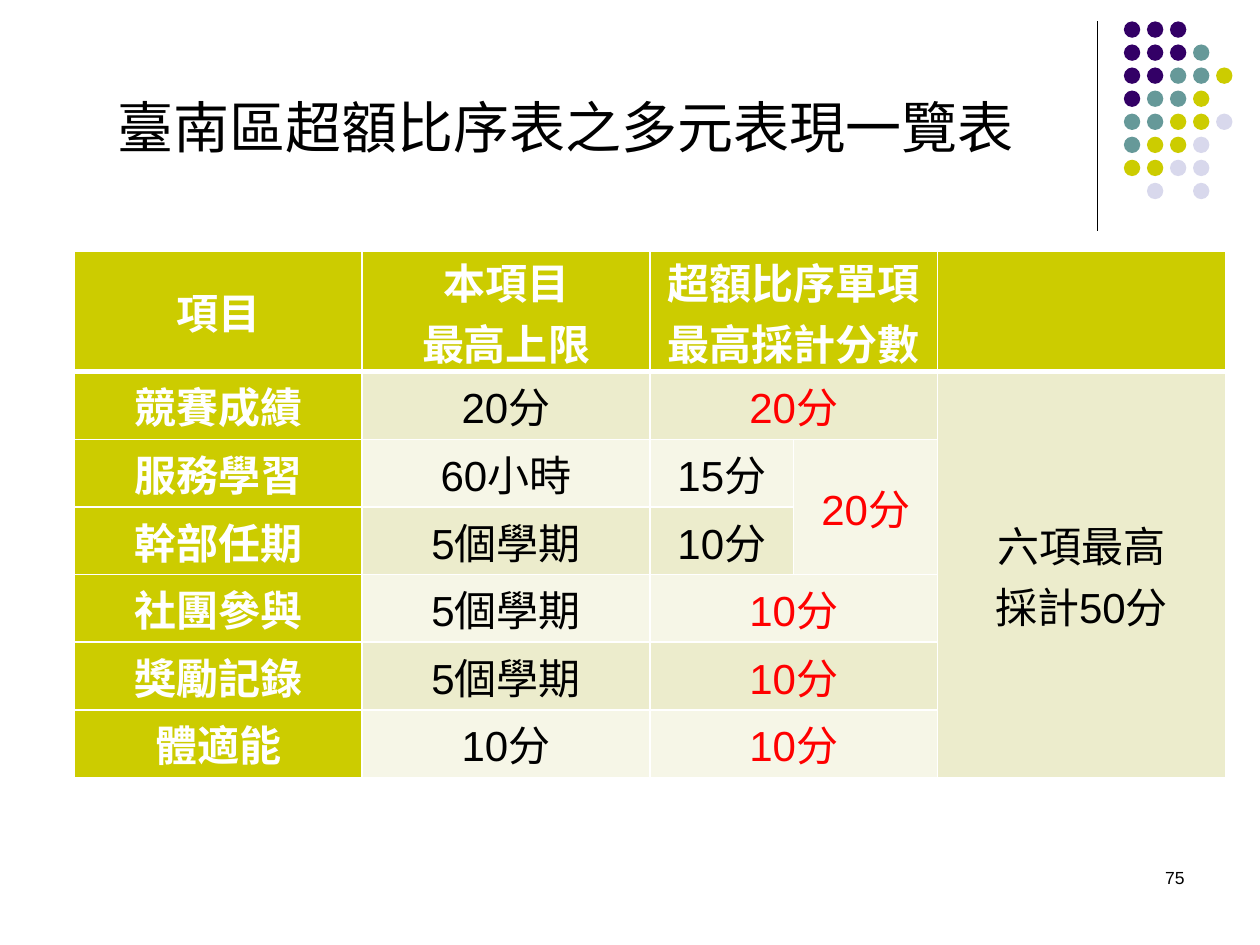
from pptx import Presentation
from pptx.dml.color import RGBColor
from pptx.enum.shapes import MSO_CONNECTOR as Line, MSO_SHAPE as Shape
from pptx.enum.text import MSO_ANCHOR as Anchor, MSO_AUTO_SIZE as Fit, PP_ALIGN as Align
from pptx.oxml import parse_xml
from pptx.oxml.ns import nsdecls
from pptx.util import Inches, Pt

WHITE, BLACK, RED = "FFFFFF", "000000", "FF0000"
GOLD, SAND, PALE = "CCCC00", "ECECCC", "F6F6E7"
DOTS = ["PPP", "PPPT", "PPTTG", "PTTG", "TTGGL", "TGGL", "GGLL", " L L"]
TINTS = {"P": "330066", "T": "669999", "G": GOLD, "L": "D8D8EC"}

HEAD = ["項目", "本項目\n最高上限", "超額比序單項\n最高採計分數", "", ""]
ROWS = [
    ["競賽成績", "20分", "20分", "", "六項最高\n採計50分"],
    ["服務學習", "60小時", "15分", "20分", ""],
    ["幹部任期", "5個學期", "10分", "", ""],
    ["社團參與", "5個學期", "10分", "", ""],
    ["獎勵記錄", "5個學期", "10分", "", ""],
    ["體適能", "10分", "10分", "", ""],
]
SPLIT = (2, 3)  # rows whose score column stays in two halves


def color(code):
    return RGBColor.from_string(code)


def write(frame, text, size=24, ink=BLACK, bold=False, align=Align.CENTER,
          font="Arial", cjk="Noto Sans CJK SC"):
    frame.text = text
    for para in frame.paragraphs:
        para.alignment = align
        for run in para.runs:
            style = run.font
            style.size, style.bold, style.name = Pt(size), bold, font
            style.color.rgb = color(ink)
            run._r.get_or_add_rPr().append(
                parse_xml(f'<a:ea {nsdecls("a")} typeface="{cjk}"/>'))


def edge(cell, heavy=()):
    """Draw white cell borders, 3 pt on the heavy sides and 1 pt elsewhere."""
    props = cell._tc.get_or_add_tcPr()
    for spot, side in enumerate("LRTB"):
        wide = Pt(3 if side in heavy else 1)
        props.insert(spot, parse_xml(
            f'<a:ln{side} {nsdecls("a")} w="{wide}"><a:solidFill>'
            f'<a:srgbClr val="{WHITE}"/></a:solidFill></a:ln{side}>'))


class Page:
    """One slide on a grid of 100 columns by 75 rows."""

    def __init__(self, deck):
        self.unit = deck.slide_width / 100
        self.slide = deck.slides.add_slide(deck.slide_layouts[5])

    def grid(self, *cells):
        return [round(n * self.unit) for n in cells]

    def title(self, text, *box):
        head = self.slide.shapes.title
        head.left, head.top, head.width, head.height = self.grid(*box)
        frame = head.text_frame
        frame.auto_size, frame.vertical_anchor = Fit.NONE, Anchor.MIDDLE
        write(frame, text, size=32, align=Align.LEFT, font="Noto Sans CJK SC")

    def label(self, text, *box, **style):
        frame = self.slide.shapes.add_textbox(*self.grid(*box)).text_frame
        frame.word_wrap = True
        write(frame, text, **style)

    def rule(self, *ends):
        line = self.slide.shapes.add_connector(Line.STRAIGHT, *self.grid(*ends))
        line.line.color.rgb, line.line.width = color(BLACK), Pt(0.75)
        line._element.spPr.append(parse_xml(f'<a:effectLst {nsdecls("a")}/>'))

    def dots(self, left, top, step, size):
        group = self.slide.shapes.add_group_shape()
        for row, marks in enumerate(DOTS):
            for col, mark in enumerate(marks):
                if mark == " ":
                    continue
                dot = group.shapes.add_shape(Shape.OVAL, *self.grid(
                    left + col * step, top + row * step, size, size))
                dot.shadow.inherit = False
                dot.fill.solid()
                dot.fill.fore_color.rgb = color(TINTS[mark])
                dot.line.fill.background()

    def table(self, left, top, cols, rows):
        box = self.grid(left, top, sum(cols), sum(rows))
        table = self.slide.shapes.add_table(len(rows), len(cols), *box).table
        for col, wide in zip(table.columns, self.grid(*cols)):
            col.width = wide
        for row, tall in zip(table.rows, self.grid(*rows)):
            row.height = tall
        for r, texts in enumerate([HEAD] + ROWS):
            for c, text in enumerate(texts):
                self.cell(table.cell(r, c), r, c, text)
            if r not in SPLIT:
                table.cell(r, 2).merge(table.cell(r, 3))
        table.cell(SPLIT[0], 3).merge(table.cell(SPLIT[1], 3))
        table.cell(1, 4).merge(table.cell(len(ROWS), 4))

    def cell(self, cell, row, col, text):
        lead = row == 0 or col == 0
        score = col == 3 or col == 2 and row not in SPLIT
        cell.fill.solid()
        cell.fill.fore_color.rgb = color(GOLD if lead else SAND if row % 2 else PALE)
        cell.vertical_anchor = Anchor.MIDDLE
        cell.margin_left = cell.margin_right = Inches(0.07)
        cell.margin_top = cell.margin_bottom = 0
        edge(cell, heavy="B" if row == 0 else "T" if row == 1 else "")
        if text:
            write(cell.text_frame, text, bold=lead,
                  ink=WHITE if lead else RED if score else BLACK)


def main():
    deck = Presentation()
    deck.slide_width, deck.slide_height = Inches(10), Inches(7.5)
    page = Page(deck)
    page.rule(87.1, 1.7, 87.1, 18.3)
    page.dots(89.2, 1.7, step=1.83, size=1.3)
    page.label("75", 71.7, 68.3, 23.3, 5, size=10, align=Align.RIGHT)
    half = 11.42
    page.table(5.9, 19.9, [2 * half, 2 * half, half, half, 2 * half],
               [9.6] + [5.37] * len(ROWS))
    page.title("臺南區超額比序表之多元表現一覽表", 8.3, 6.8, 78.7, 6.4)
    deck.save("out.pptx")


if __name__ == "__main__":
    main()
